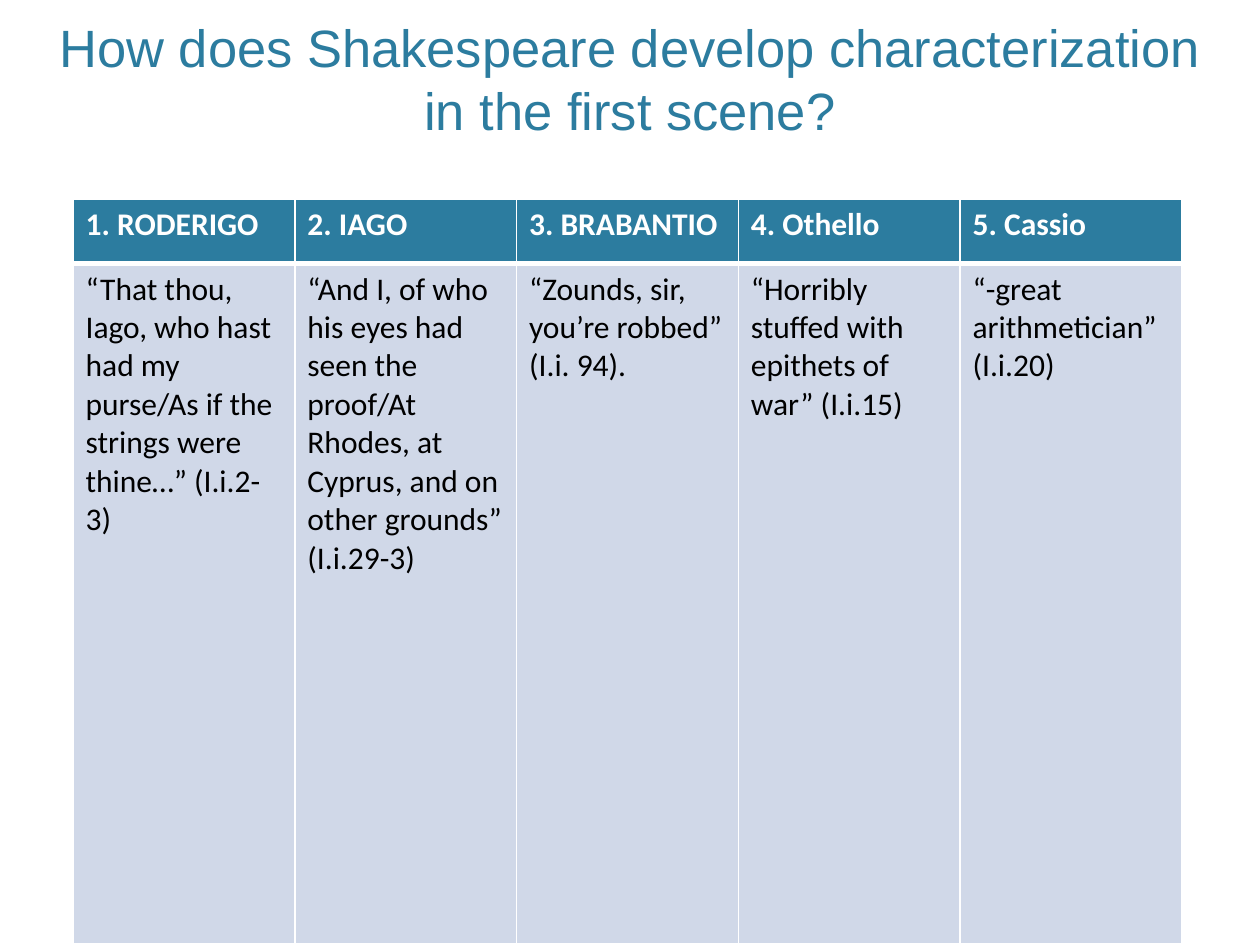
from lxml import etree
from pptx import Presentation
from pptx.dml.color import RGBColor
from pptx.enum.text import MSO_ANCHOR, PP_ALIGN
from pptx.oxml.ns import qn
from pptx.util import Pt

BOTTOM = MSO_ANCHOR.BOTTOM
CENTER = PP_ALIGN.CENTER

TITLE = "How does Shakespeare develop characterization in the first scene?"
CHARACTERS = [
    ("1. RODERIGO", "“That thou, Iago, who hast had my purse/As if the strings were thine…” (I.i.2-3)"),
    ("2. IAGO", "“And I, of who his eyes had seen the proof/At Rhodes, at Cyprus, and on other grounds” (I.i.29-3)"),
    ("3. BRABANTIO", "“Zounds, sir, you’re robbed” (I.i. 94)."),
    ("4. Othello", "“Horribly stuffed with epithets of war” (I.i.15)"),
    ("5. Cassio", "“-great arithmetician” (I.i.20)"),
]
COLORS = {"teal": "2C7C9F", "pale": "D0D8E8", "white": "FFFFFF", "black": "000000"}
ROW_STYLES = [
    {"height": 36.72, "fill": "teal", "ink": "white", "bold": True,
     "borders": {"lnL": 1, "lnR": 1, "lnT": 1, "lnB": 3}},
    {"height": 388.8, "fill": "pale", "ink": "black", "bold": False,
     "borders": {"lnL": 1, "lnR": 1, "lnT": 3, "lnB": 1}},
]
TABLE_LEFT, TABLE_TOP, COLUMN_WIDTH = 41.76, 114, 126.72


def color(name):
    return RGBColor.from_string(COLORS[name])


def format_text(frame, face, size, ink, bold=False):
    for paragraph in frame.paragraphs:
        for run in paragraph.runs:
            run.font.name = face
            run.font.size = Pt(size)
            run.font.bold = bold
            run.font.color.rgb = color(ink)


def add_borders(cell, borders):
    properties = cell._tc.get_or_add_tcPr()
    for side, width in borders.items():
        line = etree.SubElement(properties, qn(f"a:{side}"), w=str(Pt(width)))
        solid = etree.SubElement(line, qn("a:solidFill"))
        etree.SubElement(solid, qn("a:srgbClr"), val=COLORS["white"])


def add_title(slide):
    title = slide.shapes.title
    title.left, title.top, title.width, title.height = Pt(18), Pt(8.64), Pt(684), Pt(75.6)
    frame = title.text_frame
    frame.text = TITLE
    frame.word_wrap = True
    frame.vertical_anchor = BOTTOM
    frame.paragraphs[0].alignment = CENTER
    format_text(frame, "Arial", 30, "teal")


def add_quotes(slide):
    width = COLUMN_WIDTH * len(CHARACTERS)
    height = sum(style["height"] for style in ROW_STYLES)
    quotes = slide.shapes.add_table(
        len(ROW_STYLES), len(CHARACTERS), Pt(TABLE_LEFT), Pt(TABLE_TOP), Pt(width), Pt(height)
    ).table
    for column in quotes.columns:
        column.width = Pt(COLUMN_WIDTH)
    for r, (style, entries) in enumerate(zip(ROW_STYLES, zip(*CHARACTERS))):
        quotes.rows[r].height = Pt(style["height"])
        for c, entry in enumerate(entries):
            cell = quotes.cell(r, c)
            cell.text_frame.text = entry
            format_text(cell.text_frame, "Calibri", 18, style["ink"], style["bold"])
            add_borders(cell, style["borders"])
            cell.fill.solid()
            cell.fill.fore_color.rgb = color(style["fill"])


def main():
    """Build the slide on characterization in the first scene."""
    deck = Presentation()
    deck.slide_width, deck.slide_height = Pt(720), Pt(540)
    slide = deck.slides.add_slide(deck.slide_layouts[5])
    add_title(slide)
    add_quotes(slide)
    deck.save("out.pptx")


if __name__ == "__main__":
    main()
